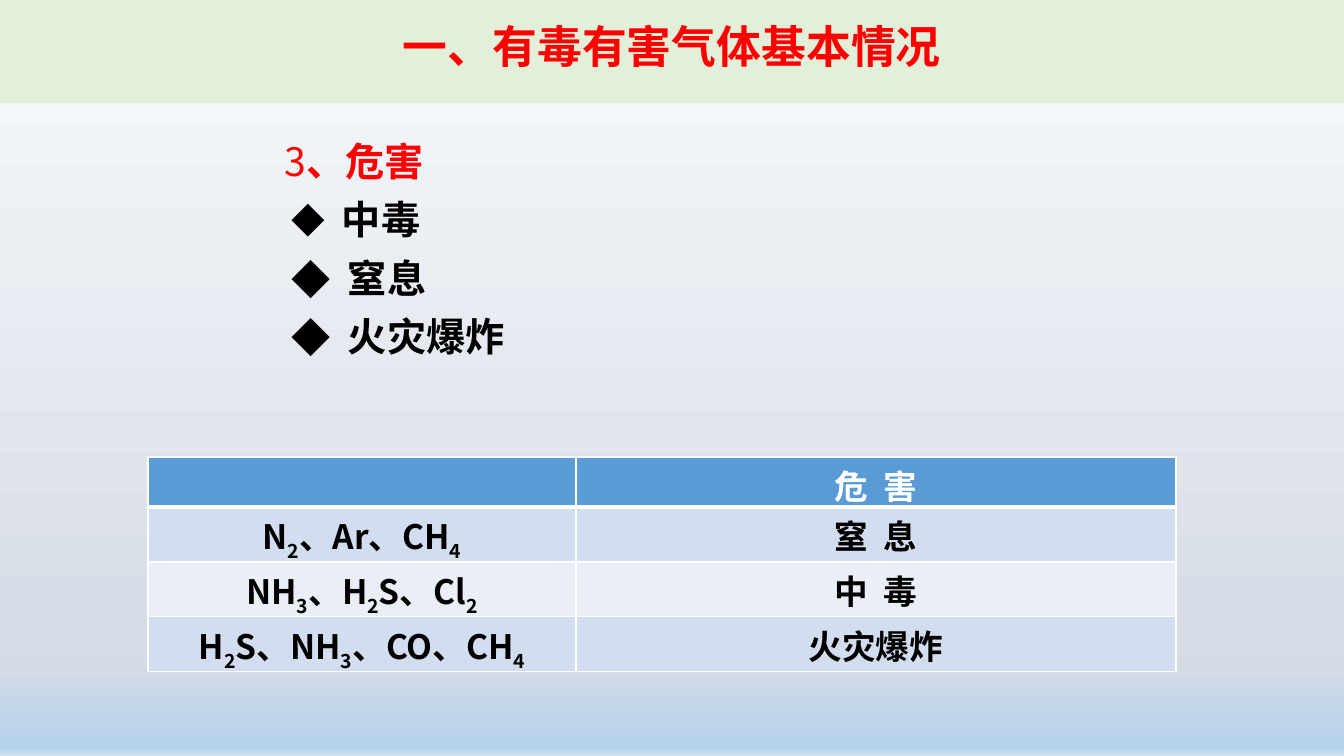
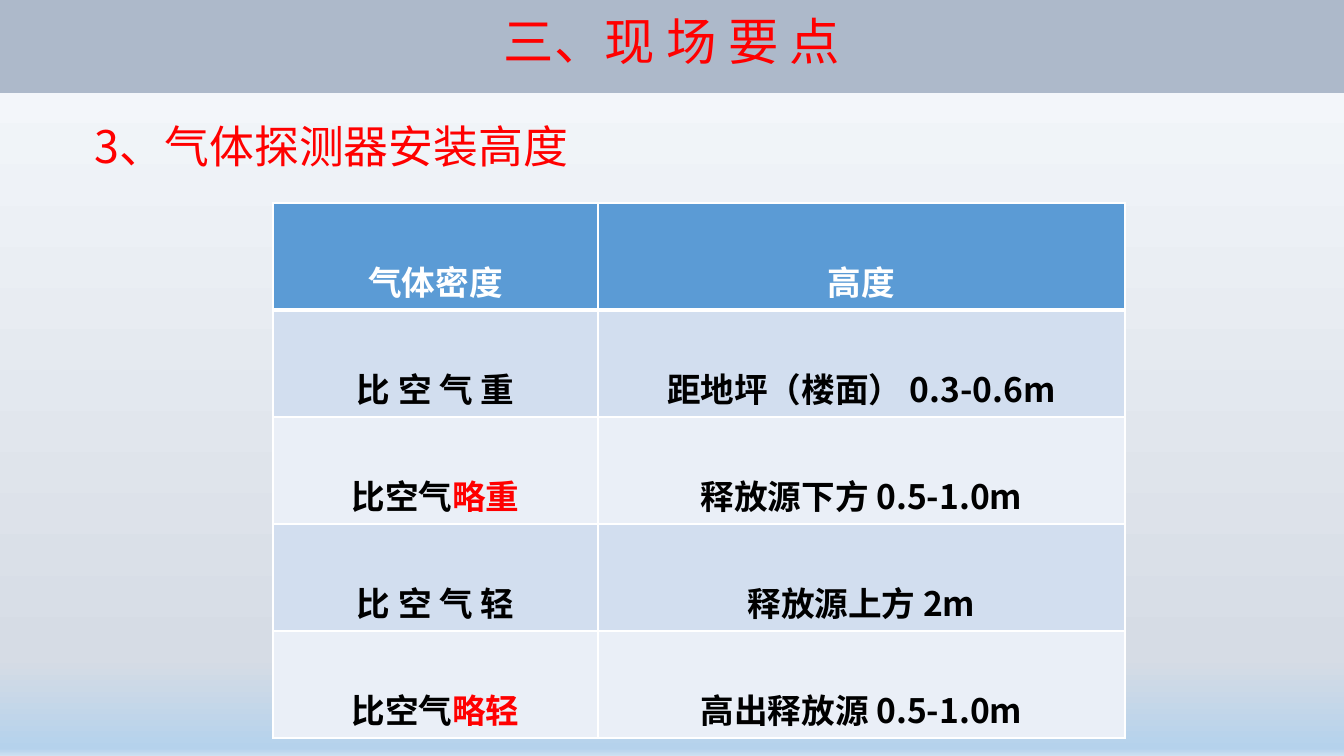
import itertools
from dataclasses import dataclass

import pptx
import pptx.dml.color
import pptx.enum.shapes
import pptx.enum.text
import pptx.oxml.ns
import pptx.util
from lxml import etree

SLIDE_W, SLIDE_H = 1344, 756
EMU_PER_PX = 12192000 / SLIDE_W
SC, JP = "Noto Sans CJK SC", "Noto Sans CJK JP"
COLORS = {
    "red": "FF0000", "black": "000000", "white": "FFFFFF",
    "green_band": "E2F0D9", "grey_band": "ADB9CA",
    "header": "5B9BD5", "odd": "D2DEEF", "even": "EAEFF7",
}
BACKGROUND = [(0, "F7FAFD"), (87, "D6DCE5"), (99, "B5D2EC"), (100, "CEE1F2")]
CENTER = pptx.enum.text.PP_ALIGN.CENTER
LEFT = pptx.enum.text.PP_ALIGN.LEFT
MIDDLE = pptx.enum.text.MSO_ANCHOR.MIDDLE
RECT = pptx.enum.shapes.MSO_SHAPE.RECTANGLE
qn = pptx.oxml.ns.qn


@dataclass(frozen=True)
class Run:
    text: str
    color: str = "black"
    size: int = 24
    bold: bool = True
    font: str = SC
    subscript: bool = False
    spacing: int = 0


@dataclass(frozen=True)
class Box:
    left: int
    top: int
    width: int
    height: int


@dataclass(frozen=True)
class Bullet:
    text: str
    indent: int
    percent: int


@dataclass(frozen=True)
class Grid:
    left: int
    top: int
    columns: tuple[int, ...]
    row_heights: tuple[int, ...]
    margins: tuple[int, int]
    line_spacing: float
    rows: list[list[list[Run]]]


def px(n: float) -> int:
    return round(n * EMU_PER_PX)


def rgb(name: str):
    return pptx.dml.color.RGBColor.from_string(COLORS[name])


def add_runs(p, runs: list[Run], align=LEFT, line_spacing: float = 1.0) -> None:
    p.alignment = align
    p.line_spacing = line_spacing
    for run in runs:
        r = p.add_run()
        r.text = run.text
        r.font.size = pptx.util.Pt(run.size)
        r.font.bold = run.bold
        r.font.color.rgb = rgb(run.color)
        r.font.name = run.font
        rPr = r._r.get_or_add_rPr()
        etree.SubElement(rPr, qn("a:ea"), typeface=run.font)
        if run.subscript:
            rPr.set("baseline", "-25000")
        if run.spacing:
            rPr.set("spc", str(run.spacing))


def formula(text: str) -> list[Run]:
    return [Run("".join(chars), subscript=is_digit)
            for is_digit, chars in itertools.groupby(text, str.isdigit)]


def spread(first: str, last: str, color: str = "black") -> list[Run]:
    return [Run(first, color), Run(" ", color, spacing=540), Run(last, color)]


def add_text_box(slide, box: Box):
    sp = slide.shapes.add_textbox(px(box.left), px(box.top), px(box.width), px(box.height))
    sp.text_frame.word_wrap = True
    return sp.text_frame


def set_title_frame(tf) -> None:
    tf.word_wrap = True
    tf.vertical_anchor = MIDDLE
    tf.margin_top, tf.margin_bottom = px(5), px(10)


def add_band(slide, height: int, fill: str, run: Run) -> None:
    sp = slide.shapes.add_shape(RECT, 0, 0, px(SLIDE_W), px(height))
    sp.shadow.inherit = False
    sp.fill.solid()
    sp.fill.fore_color.rgb = rgb(fill)
    sp.line.fill.background()
    set_title_frame(sp.text_frame)
    add_runs(sp.text_frame.paragraphs[0], [run], CENTER, 0.9)


def add_bullet(tf, bullet: Bullet) -> None:
    p = tf.add_paragraph()
    pPr = p._p.get_or_add_pPr()
    pPr.set("marL", str(px(bullet.indent)))
    pPr.set("indent", str(px(7 - bullet.indent)))
    etree.SubElement(pPr, qn("a:buSzPct"), val=str(bullet.percent * 1000))
    etree.SubElement(pPr, qn("a:buFont"), typeface=SC)
    etree.SubElement(pPr, qn("a:buChar"), char="◆")
    add_runs(p, [Run(bullet.text, size=28)], line_spacing=1.24)


def set_border(cell, side: str, points: int) -> None:
    tcPr = cell._tc.get_or_add_tcPr()
    ln = etree.SubElement(tcPr, qn(f"a:ln{side}"), w=str(pptx.util.Pt(points)))
    fill = etree.SubElement(ln, qn("a:solidFill"))
    etree.SubElement(fill, qn("a:srgbClr"), val=COLORS["white"])


def add_grid(slide, grid: Grid) -> None:
    frame = slide.shapes.add_table(
        len(grid.rows), len(grid.columns), px(grid.left), px(grid.top),
        px(sum(grid.columns)), px(sum(grid.row_heights)))
    table = frame.table
    table.first_row = table.horz_banding = False
    for column, width in zip(table.columns, grid.columns):
        column.width = px(width)
    for i, (row, height) in enumerate(zip(table.rows, grid.row_heights)):
        row.height = px(height)
        fill = "header" if i == 0 else ("odd" if i % 2 else "even")
        for cell, runs in zip(row.cells, grid.rows[i]):
            cell.margin_top, cell.margin_bottom = map(px, grid.margins)
            for side in "LRTB":
                heavy = (i, side) in ((0, "B"), (1, "T"))
                set_border(cell, side, 3 if heavy else 1)
            cell.fill.solid()
            cell.fill.fore_color.rgb = rgb(fill)
            add_runs(cell.text_frame.paragraphs[0], runs, CENTER, grid.line_spacing)


def set_background(master) -> None:
    fill = master.background.fill
    fill.gradient()
    fill.gradient_angle = 270
    stops = master.element.cSld.find(".//" + qn("a:gsLst"))
    for stop in list(stops):
        stops.remove(stop)
    for position, color in BACKGROUND:
        stop = etree.SubElement(stops, qn("a:gs"), pos=str(position * 1000))
        etree.SubElement(stop, qn("a:srgbClr"), val=color)


def build_hazards(slide) -> None:
    add_band(slide, 103, "green_band", Run("一、有毒有害气体基本情况", "red", 32))
    tf = add_text_box(slide, Box(275, 121, 469, 295))
    add_runs(tf.paragraphs[0], [Run("3", "red", 28, bold=False), Run("、危害", "red", 28)],
             line_spacing=1.24)
    for bullet in (Bullet("中毒", 57, 86), Bullet("窒息", 63, 100), Bullet("火灾爆炸", 63, 100)):
        add_bullet(tf, bullet)
    add_grid(slide, Grid(148, 457, (428, 600), (50, 55, 55, 55), (4, 0), 1.0, [
        [[], spread("危", "害", "white")],
        [formula("N2、Ar、CH4"), spread("窒", "息")],
        [formula("NH3、H2S、Cl2"), spread("中", "毒")],
        [formula("H2S、NH3、CO、CH4"), [Run("火灾爆炸")]],
    ]))


def build_heights(slide) -> None:
    tf = add_text_box(slide, Box(85, 101, 1159, 102))
    set_title_frame(tf)
    add_runs(tf.paragraphs[0], [Run("3、气体探测器安装高度", "red", 32, False, JP)],
             line_spacing=0.9)
    add_band(slide, 93, "grey_band", Run("三、现 场 要 点", "red", 36, False))
    add_grid(slide, Grid(273, 203, (325, 527), (107,) * 5, (5, 5), 2.0, [
        [[Run("气体密度", "white")], [Run("高度", "white")]],
        [[Run("比 空 气 重")], [Run("距地坪（楼面） 0.3-0.6m")]],
        [[Run("比空气"), Run("略重", "red")], [Run("释放源下方 0.5-1.0m")]],
        [[Run("比 空 气 轻")], [Run("释放源上方 2m")]],
        [[Run("比空气"), Run("略轻", "red")], [Run("高出释放源 0.5-1.0m")]],
    ]))


def main() -> None:
    prs = pptx.Presentation()
    prs.slide_width, prs.slide_height = px(SLIDE_W), px(SLIDE_H)
    set_background(prs.slide_master)
    for build in (build_hazards, build_heights):
        build(prs.slides.add_slide(prs.slide_layouts[6]))
    prs.save("out.pptx")


if __name__ == "__main__":
    main()
